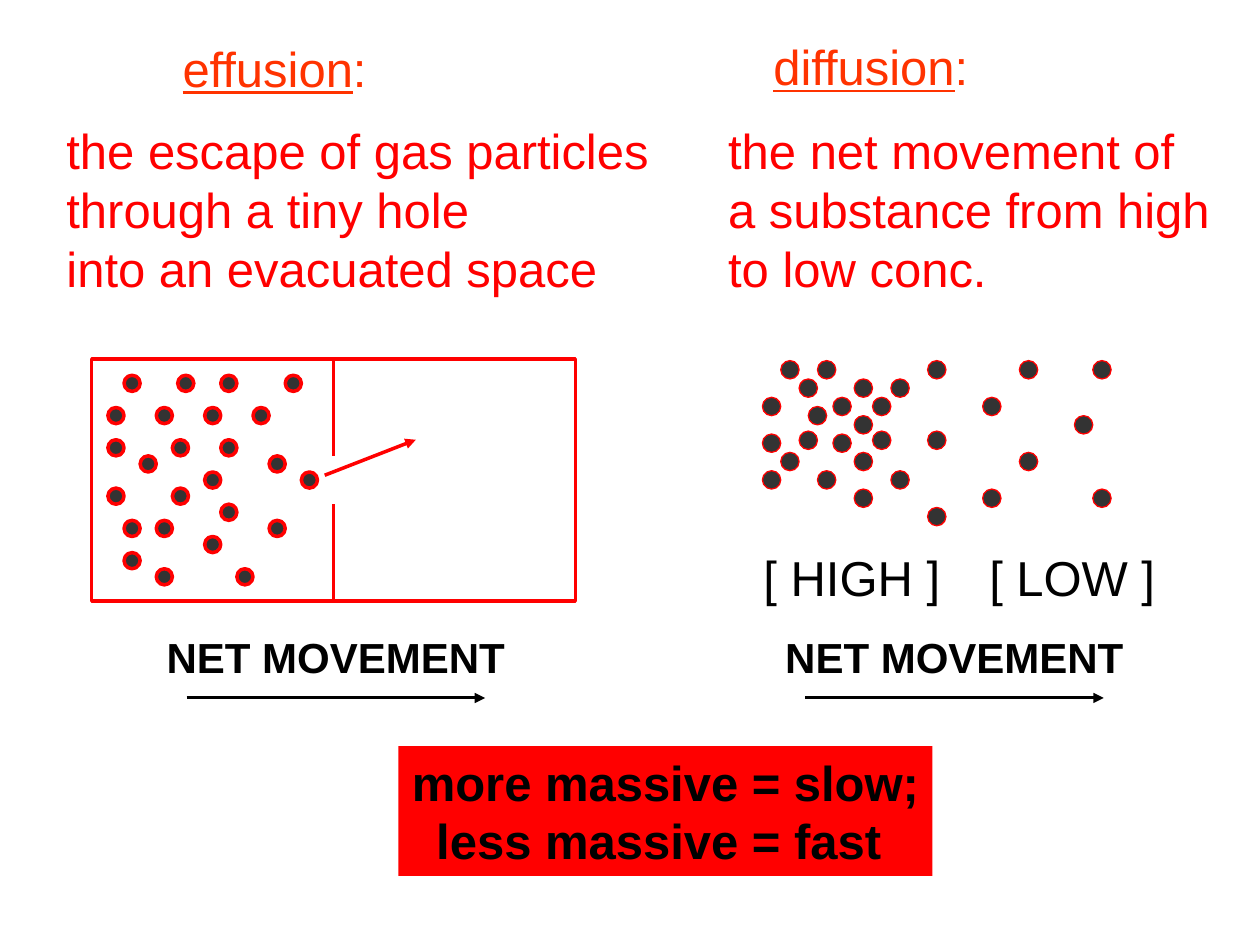
from pptx import Presentation
from pptx.dml.color import RGBColor as Rgb
from pptx.enum.shapes import MSO_CONNECTOR as Conn, MSO_SHAPE as Geo
from pptx.enum.text import MSO_ANCHOR as Anchor, MSO_AUTO_SIZE as Fit, PP_ALIGN as Align
from pptx.oxml.ns import qn
from pptx.util import Cm, Pt
from lxml.etree import SubElement

RED, ORANGE, GRAY, BLACK = "FF0000", "FF3300", "333333", "000000"

# Content: places in cm as left, top, width, height
TITLES = [("diffusion", (15.34, 0.61, 4.75, 1.45)),
          ("effusion", (3.43, 0.64, 4.52, 1.45))]
DEFS = [(["the net movement of", "a substance from high", "to low conc."],
         (13.67, 2.31, 11.02, 3.81)),
        (["the escape of gas particles", "through a tiny hole", "into an evacuated space"],
         (0.33, 2.31, 13.06, 3.81))]
LEVELS = [("[ HIGH ] ", (15.14, 10.9, 4.34, 1.45)),
          ("[ LOW ] ", (19.56, 10.9, 4.11, 1.45))]
RULE = ["more massive = slow;", "less massive = fast "]
RULE_BOX = (8.03, 15.04, 10.77, 2.62)
MOVES = [15.29, 2.82]  # left edge of each "NET MOVEMENT" label

# Particles: grid row -> grid columns
GAS = {1: [2, 5.33, 8, 12], 3: [1, 4, 7, 10], 5: [1, 5, 8], 6: [3, 11],
       7: [7, 13], 8: [1, 5], 9: [8], 10: [2, 4, 11], 11: [7],
       12: [2], 13: [4, 9]}
MIX = {0: [1, 3, 9, 14, 18], 1: [2, 5, 7], 2: [0, 3.84, 6, 12],
       2.5: [2.5], 3: [5, 17], 3.84: [2, 6, 9], 4: [0, 3.84],
       5: [1, 5, 14], 6: [0, 3, 7], 7: [5, 12, 18], 8: [9]}

# Gas vessel grid: 30 by 15 steps
LEFT, TOP, STEP = 1.85, 7.24, 0.325

deck = Presentation()
deck.slide_width, deck.slide_height = Cm(25.4), Cm(19.05)
slide = deck.slides.add_slide(deck.slide_layouts[6])


def color(code):
    return Rgb.from_string(code)


def place(box):
    return [Cm(v) for v in box]


def write(shape, lines, size, code, bold=False, align=Align.LEFT,
          indent=0, wrap=False, anchor=Anchor.MIDDLE):
    """Each line is a list of (text, underlined) runs."""
    frame = shape.text_frame
    frame.word_wrap, frame.vertical_anchor = wrap, anchor
    frame.auto_size = Fit.NONE if wrap else Fit.SHAPE_TO_FIT_TEXT
    for i, line in enumerate(lines):
        para = frame.add_paragraph() if i else frame.paragraphs[0]
        para.alignment = align
        if len(lines) > 1:
            para.line_spacing = Pt(size * 1.2)
        if indent:
            props = para._p.get_or_add_pPr()
            props.set("marL", str(Cm(indent)))
            props.set("indent", "0")
        for text, under in line:
            run = para.add_run()
            run.text = text
            font = run.font
            font.name, font.size, font.bold = "Arial", Pt(size), bold
            font.underline = under
            font.color.rgb = color(code)


def plain(lines):
    return [[(line, False)] for line in lines]


def shape(home, geo, box, fill=None, edge=None, width=2):
    item = home.add_shape(geo, *place(box))
    item.shadow.inherit = False
    if fill:
        item.fill.solid()
        item.fill.fore_color.rgb = color(fill)
    else:
        item.fill.background()
    if edge:
        item.line.color.rgb = color(edge)
        item.line.width = Pt(width)
    else:
        item.line.fill.background()
    return item


def link(home, ends, code, width, head=False):
    item = home.add_connector(Conn.STRAIGHT, *place(ends))
    item.line.color.rgb = color(code)
    item.line.width = Pt(width)
    if head:
        SubElement(item.line._get_or_add_ln(), qn("a:tailEnd"), type="triangle")
    SubElement(item._element.spPr, qn("a:effectLst"))
    return item


def dots(home, rows, left, top, step, size, width):
    for row, cols in rows.items():
        for col in cols:
            box = (left + col * step, top + row * step, size, size)
            shape(home, Geo.OVAL, box, GRAY, RED, width)


def spot(col, row):
    return LEFT + col * STEP, TOP + row * STEP


# Headings
for word, box in TITLES:
    write(slide.shapes.add_textbox(*place(box)),
          [[(word, True), (":", False)]], 28, ORANGE)

# Diffusion particles
mix = slide.shapes.add_group_shape().shapes
dots(mix, MIX, 15.37, 7.27, 0.37, 0.37, 0.75)

# Effusion vessel with a hole in its wall
gas = slide.shapes.add_group_shape().shapes
tank = shape(gas, Geo.RECTANGLE, (LEFT, TOP, 30 * STEP, 15 * STEP), edge=RED)
for side, edge, hole in [(0, 0, 6), (2, 15, 9)]:
    wall = link(gas, spot(15, edge) + spot(15, hole), RED, 2)
    wall.begin_connect(tank, side)
dots(gas, GAS, LEFT, TOP, STEP, STEP, 2)
link(gas, spot(14.45, 7.2) + spot(20.1, 5), RED, 2, head=True)

# Definitions
for lines, box in DEFS:
    write(slide.shapes.add_textbox(*place(box)), plain(lines), 28, RED, indent=0.76)

# Direction of movement
for left in MOVES:
    move = slide.shapes.add_group_shape().shapes
    write(move.add_textbox(*place((left, 12.6, 7.9, 2.18))),
          plain(["NET MOVEMENT"]), 24, BLACK, bold=True,
          align=Align.CENTER, wrap=True, anchor=Anchor.TOP)
    link(move, (left + 0.94, 14.07, left + 6.96, 14.07), BLACK, 1.75, head=True)

# Speed rule
write(shape(slide.shapes, Geo.RECTANGLE, RULE_BOX, RED), plain(RULE), 28, BLACK,
      bold=True, align=Align.CENTER)

# Concentration labels
for text, box in LEVELS:
    write(slide.shapes.add_textbox(*place(box)), plain([text]), 28, BLACK,
          align=Align.CENTER)

deck.save("out.pptx")
